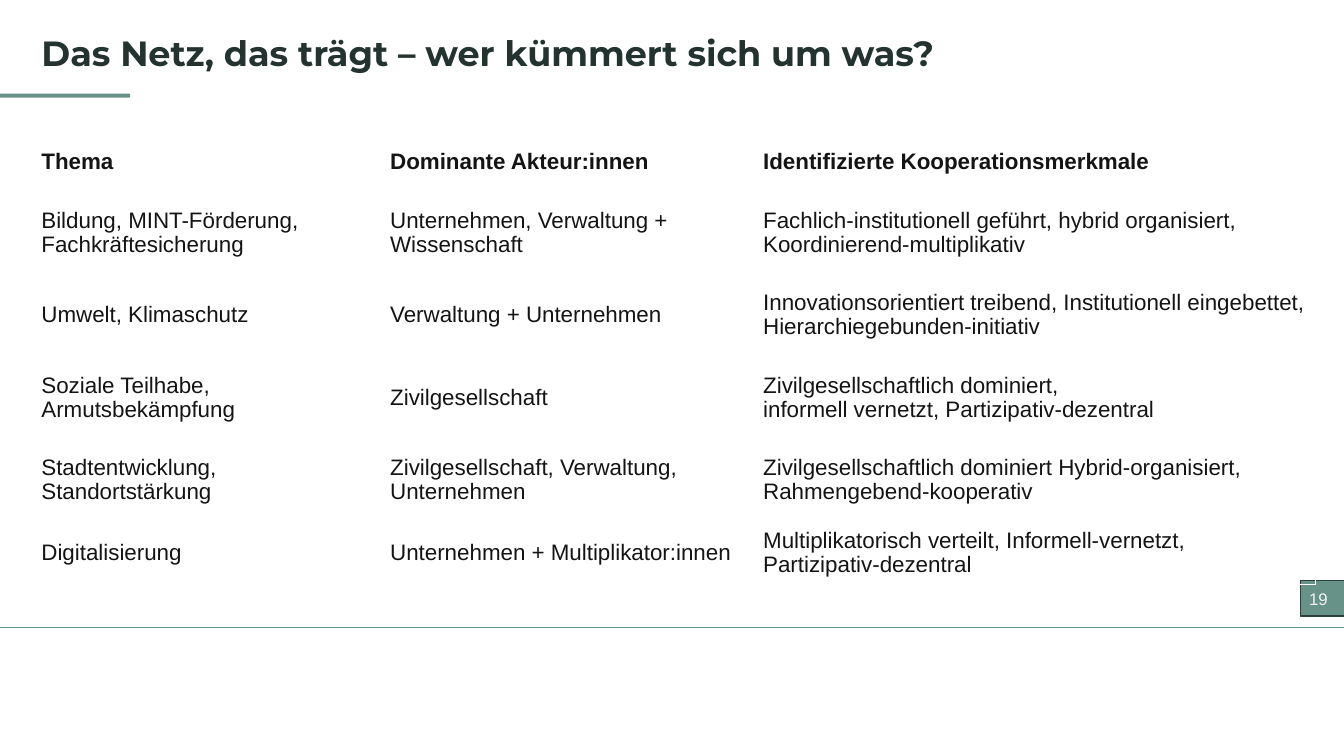
from lxml import etree
from pptx import Presentation, util as u
from pptx.dml.color import RGBColor
from pptx.enum import shapes, text
from pptx.oxml.ns import qn

Cm = u.Cm


def color(code):
    return RGBColor.from_string(code)


def write(frame, words, size=16, font="Arial", ink="141414", bold=False, lead=None):
    frame.word_wrap = True
    frame.text = words
    for para in frame.paragraphs:
        para.alignment = text.PP_ALIGN.LEFT
        para.line_spacing = lead
        para.font.size = u.Pt(size)
        para.font.name = font
        para.font.bold = bold
        para.font.color.rgb = color(ink)


prs = Presentation()
prs.slide_width, prs.slide_height = Cm(33.87), Cm(19.05)
slide = prs.slides.add_slide(prs.slide_layouts[5])
items = slide.shapes

# Footer line
line = items.add_connector(shapes.MSO_CONNECTOR.STRAIGHT,
                           Cm(-0.2), Cm(15.8), Cm(34.14), Cm(15.8))
line.line.color.rgb = color("679288")
line.line.width = u.Pt(0.75)
etree.SubElement(line._element.spPr, qn("a:effectLst"))

# Title bar and page badge
kinds = shapes.MSO_SHAPE
for kind, left, top, width, height, fill, edge in [
    (kinds.ROUNDED_RECTANGLE, -0.25, 2.36, 3.53, 0.1, "679186", None),
    (kinds.RECTANGLE, 32.77, 14.63, 1.32, 0.89, "679288", "2D403C"),
]:
    box = items.add_shape(kind, Cm(left), Cm(top), Cm(width), Cm(height))
    box.shadow.inherit = False
    box.fill.solid()
    box.fill.fore_color.rgb = color(fill)
    if edge:
        box.line.color.rgb = color(edge)
        box.line.width = u.Pt(1)
    else:
        box.line.fill.background()

# Page number
page = items.add_textbox(Cm(32.74), Cm(14.71), Cm(1.63), Cm(0.76))
write(page.text_frame, "19", size=12, ink="F2F2F2")

# Title
title = items.title
title.left, title.top, title.width, title.height = Cm(0.79), Cm(0.79), Cm(26.26), Cm(1.32)
title.text_frame.vertical_anchor = text.MSO_ANCHOR.TOP
write(title.text_frame, "Das Netz, das trägt – wer kümmert sich um was?",
      size=25, font="Montserrat", ink="23332F", bold=True, lead=0.9)

# Table
rows = [
    ("Thema", "Dominante Akteur:innen", "Identifizierte Kooperationsmerkmale"),
    ("Bildung, MINT-Förderung, Fachkräftesicherung",
     "Unternehmen, Verwaltung + Wissenschaft",
     "Fachlich-institutionell geführt, hybrid organisiert, Koordinierend-multiplikativ"),
    ("Umwelt, Klimaschutz", "Verwaltung + Unternehmen",
     "Innovationsorientiert treibend, Institutionell eingebettet, Hierarchiegebunden-initiativ"),
    ("Soziale Teilhabe, Armutsbekämpfung", "Zivilgesellschaft",
     "Zivilgesellschaftlich dominiert,\ninformell vernetzt, Partizipativ-dezentral"),
    ("Stadtentwicklung, Standortstärkung",
     "Zivilgesellschaft, Verwaltung, Unternehmen",
     "Zivilgesellschaftlich dominiert Hybrid-organisiert, Rahmengebend-kooperativ"),
    ("Digitalisierung", "Unternehmen + Multiplikator:innen",
     "Multiplikatorisch verteilt, Informell-vernetzt, Partizipativ-dezentral"),
]
widths = [8.79, 9.4, 14.17]
heights = [1.5] + [2.08] * 4 + [1.22]
grid = items.add_table(len(rows), len(widths), Cm(0.79), Cm(3.33),
                       Cm(sum(widths)), Cm(sum(heights))).table
grid.first_row = grid.horz_banding = False
for col, width in zip(grid.columns, widths):
    col.width = Cm(width)
for r, (row, height) in enumerate(zip(rows, heights)):
    grid.rows[r].height = Cm(height)
    for c, words in enumerate(row):
        cell = grid.cell(r, c)
        cell.fill.background()
        cell.vertical_anchor = text.MSO_ANCHOR.MIDDLE
        cell.margin_right = Cm(0.2)
        write(cell.text_frame, words, bold=r == 0, lead=0.97)

prs.save("out.pptx")
